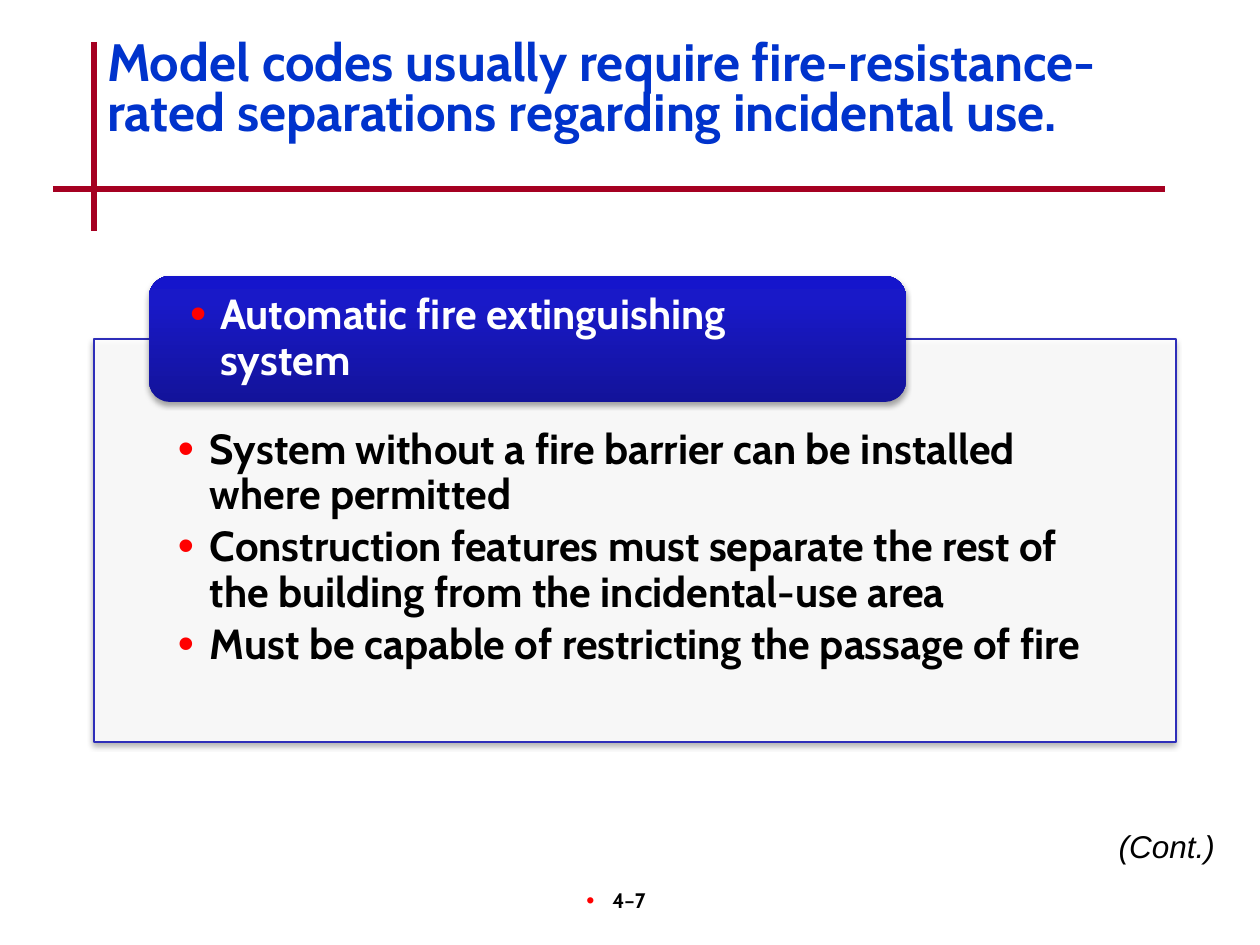
from lxml.etree import SubElement
from pptx import Presentation
from pptx.dml.color import RGBColor
from pptx.enum.shapes import MSO_CONNECTOR, MSO_SHAPE
from pptx.enum.text import MSO_ANCHOR, MSO_AUTO_SIZE, PP_ALIGN
from pptx.oxml import parse_xml
from pptx.oxml.ns import nsdecls, qn
from pptx.util import Emu, Pt

SCALE = 914400 / 126
BLACK = RGBColor(0x00, 0x00, 0x00)
WHITE = RGBColor(0xFF, 0xFF, 0xFF)
RED = RGBColor(0xFF, 0x00, 0x00)
CRIMSON = RGBColor(0xA5, 0x00, 0x21)
TITLE_BLUE = RGBColor(0x00, 0x33, 0xCC)
BORDER_BLUE = RGBColor(0x2E, 0x2E, 0xB9)
HEADER_STOPS = [
    (0, RGBColor(0x13, 0x13, 0x9A)),
    (80, RGBColor(0x19, 0x19, 0xC8)),
    (100, RGBColor(0x15, 0x15, 0xCC)),
]


def px(n):
    return Emu(round(n * SCALE))


def place(sp, x, y, w, h):
    sp.left, sp.top, sp.width, sp.height = px(x), px(y), px(w), px(h)


def set_frame(tf, margins=(13, 6, 13, 6), anchor=MSO_ANCHOR.TOP):
    tf.word_wrap = True
    tf.auto_size = MSO_AUTO_SIZE.NONE
    tf.vertical_anchor = anchor
    tf.margin_left, tf.margin_top, tf.margin_right, tf.margin_bottom = map(px, margins)


def add_bullet(p, indent, hang):
    pPr = p._p.get_or_add_pPr()
    pPr.set("marL", str(px(indent)))
    pPr.set("indent", str(px(-hang)))
    color = SubElement(pPr, qn("a:buClr"))
    SubElement(color, qn("a:srgbClr"), val=str(RED))
    SubElement(pPr, qn("a:buSzPct"), val="110000")
    SubElement(pPr, qn("a:buFont"), typeface="Arial")
    SubElement(pPr, qn("a:buChar"), char="•")


def write_text(p, text, size=24, font="Cabin", color=BLACK, bold=True, italic=False,
               align=PP_ALIGN.LEFT, spacing=1.0, after=0, bullet=None):
    if bullet:
        add_bullet(p, *bullet)
    p.alignment = align
    p.line_spacing = spacing
    p.space_before = Pt(0)
    p.space_after = Pt(after)
    r = p.add_run()
    r.text = text
    r.font.size = Pt(size)
    r.font.name = font
    r.font.bold = bold
    r.font.italic = italic
    r.font.color.rgb = color


def add_shadow(sp):
    sp._element.spPr.append(parse_xml(
        f'<a:effectLst {nsdecls("a")}><a:outerShdw blurRad="{Pt(3.1)}" dist="{Pt(1.8)}" '
        'dir="5400000" rotWithShape="0"><a:srgbClr val="000000"><a:alpha val="35000"/>'
        '</a:srgbClr></a:outerShdw></a:effectLst>'))


def add_rule(s, x1, y1, x2, y2):
    line = s.shapes.add_connector(MSO_CONNECTOR.STRAIGHT, px(x1), px(y1), px(x2), px(y2))
    line.line.color.rgb = CRIMSON
    line.line.width = Pt(3)
    SubElement(line._element.spPr, qn("a:effectLst"))


def add_heading(s, x, y, w, h, text):
    add_rule(s, x, y + 7, x, y + 196)
    add_rule(s, x - 41, y + 154, x + w, y + 154)
    title = s.shapes.title
    place(title, x, y, w, h)
    set_frame(title.text_frame)
    write_text(title.text_frame.paragraphs[0], text, size=30, color=TITLE_BLUE, spacing=0.8)


def add_panel(s, x, y, w, h, header, items):
    panel = s.shapes.add_shape(MSO_SHAPE.RECTANGLE, px(x), px(y), px(w), px(h))
    panel.fill.solid()
    panel.fill.fore_color.rgb = WHITE
    panel_color = panel._element.spPr.find(qn("a:solidFill"))[0]
    SubElement(panel_color, qn("a:alpha"), val="90000")
    panel.line.color.rgb = BORDER_BLUE
    panel.line.width = Pt(0.75)
    add_shadow(panel)

    body = s.placeholders[1]
    s.shapes._spTree.append(body._element)
    place(body, x, y, w, h)
    tf = body.text_frame
    set_frame(tf, (84, 89, 84, 24))
    for i, item in enumerate(items):
        p = tf.add_paragraph() if i else tf.paragraphs[0]
        write_text(p, item, spacing=0.9, after=4, bullet=(32, 32))

    tab = s.shapes.add_shape(MSO_SHAPE.ROUNDED_RECTANGLE, px(x + 55), px(y - 63), px(757), px(126))
    stops = "".join(f'<a:gs pos="{pos * 1000}"><a:srgbClr val="{color}"/></a:gs>'
                    for pos, color in HEADER_STOPS)
    tab._element.spPr.append(parse_xml(
        f'<a:gradFill {nsdecls("a")} rotWithShape="1"><a:gsLst>{stops}</a:gsLst>'
        '<a:lin ang="16200000" scaled="0"/></a:gradFill>'))
    tab.line.fill.background()
    add_shadow(tab)
    set_frame(tab.text_frame, (35, 0, 35, 0), MSO_ANCHOR.MIDDLE)
    write_text(tab.text_frame.paragraphs[0], header, color=WHITE, spacing=0.9, bullet=(30, 30))


def add_note(s, x, y, w, h, text, **fmt):
    box = s.shapes.add_textbox(px(x), px(y), px(w), px(h))
    set_frame(box.text_frame)
    write_text(box.text_frame.paragraphs[0], text, **fmt)


def main():
    prs = Presentation()
    prs.slide_width, prs.slide_height = px(1260), px(945)
    s = prs.slides.add_slide(prs.slide_layouts[1])
    add_heading(s, 94, 35, 1071, 126,
                "Model codes usually require fire-resistance-rated separations "
                "regarding incidental use.")
    add_panel(s, 94, 339, 1082, 403, "Automatic fire extinguishing system", [
        "System without a fire barrier can be installed where permitted",
        "Construction features must separate the rest of the building "
        "from the incidental-use area",
        "Must be capable of restricting the passage of fire",
    ])
    add_note(s, 494, 882, 262, 63, "4–7", size=12, align=PP_ALIGN.CENTER, bullet=(7, 26))
    add_note(s, 1018, 821, 210, 50, "(Cont.)", size=18, font="Arial", bold=False,
             italic=True, align=PP_ALIGN.RIGHT)
    prs.save("out.pptx")


if __name__ == "__main__":
    main()
